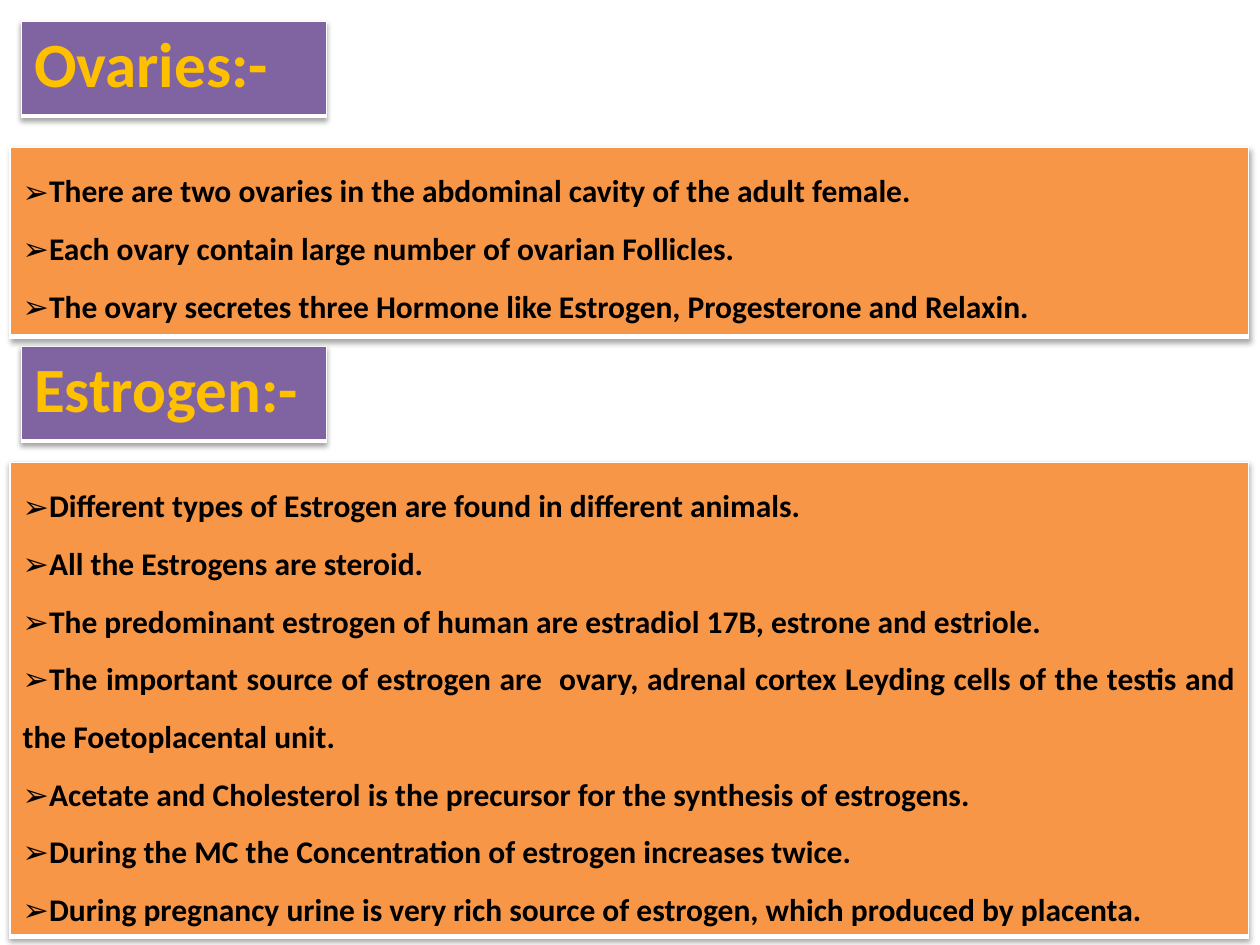
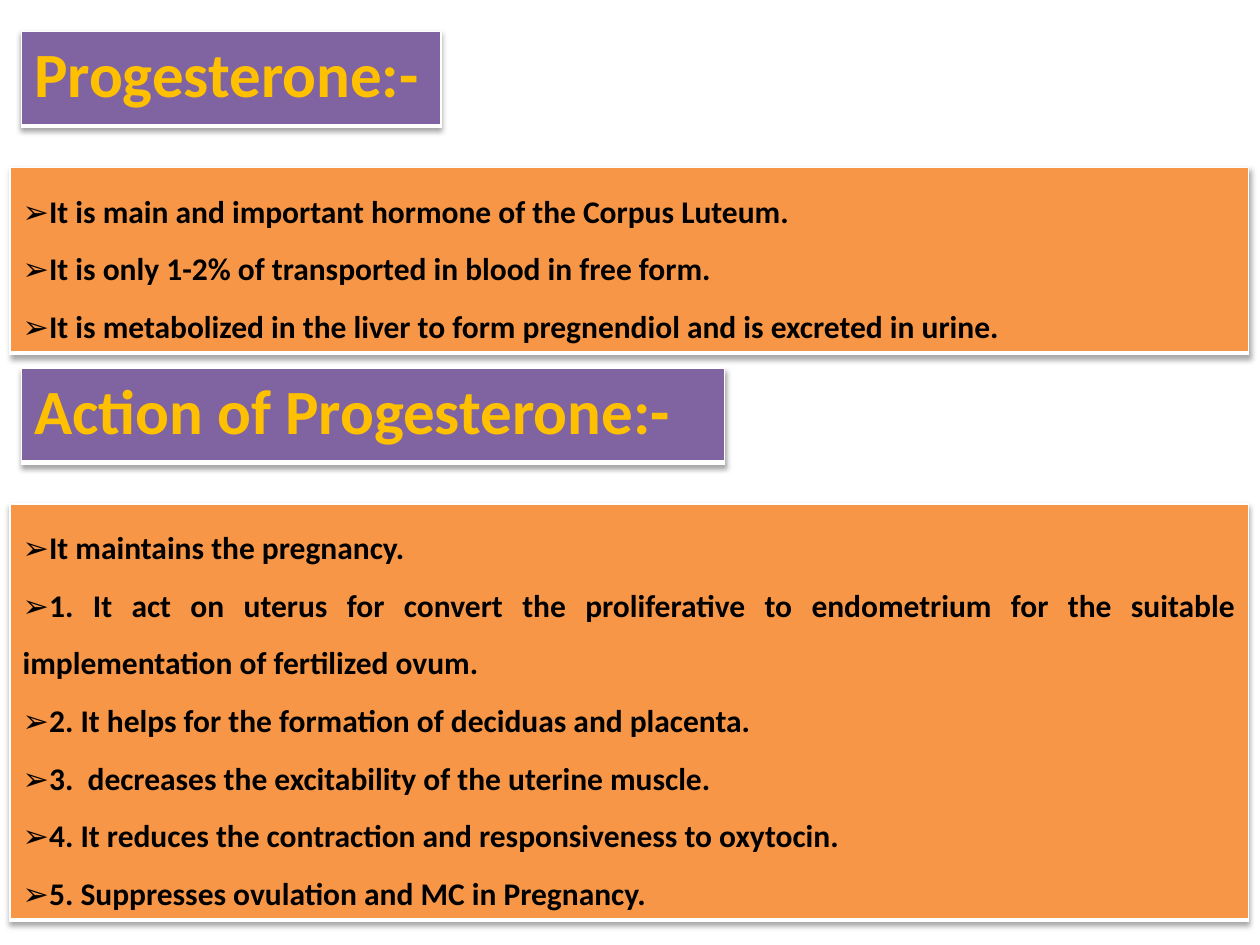
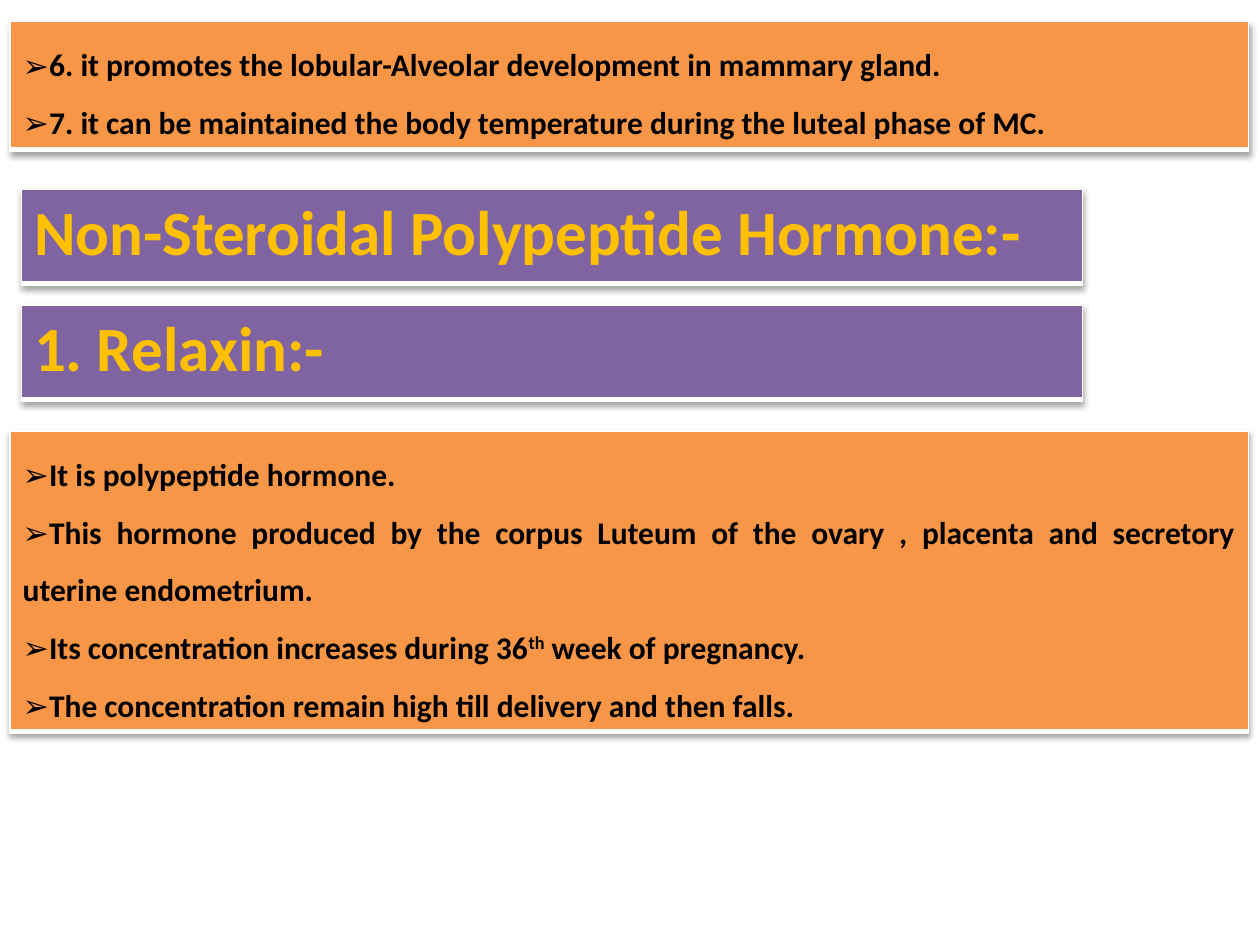
"""Builds three slides on ovarian hormones from heading and bullet panels."""
import pptx
import pptx.dml.color
import pptx.enum.text
import pptx.oxml
import pptx.oxml.ns
import pptx.util
from pptx.util import Inches

PURPLE = pptx.dml.color.RGBColor(0x80, 0x64, 0xA2)
ORANGE = pptx.dml.color.RGBColor(0xF7, 0x96, 0x46)
GOLD = pptx.dml.color.RGBColor(0xFF, 0xC0, 0x00)
BLACK = pptx.dml.color.RGBColor(0x00, 0x00, 0x00)
FONT = "Calibri"
NS = pptx.oxml.ns.nsdecls("a")
SHADOW = (f'<a:effectLst {NS}><a:outerShdw blurRad="40000" dist="23000" dir="5400000" rotWithShape="0">'
          '<a:srgbClr val="000000"><a:alpha val="35000"/></a:srgbClr></a:outerShdw></a:effectLst>')
BORDERS = {"lnL": 1, "lnR": 1, "lnT": 1, "lnB": 3}


def add_panel(s, left, top, width, height, fill):
    """Add a one-cell table with white borders and a shadow; return its cell."""
    table = s.shapes.add_table(1, 1, Inches(left), Inches(top), Inches(width), Inches(height)).table
    table.horz_banding = False
    table._tbl.tblPr.insert(0, pptx.oxml.parse_xml(SHADOW))
    cell = table.cell(0, 0)
    tcPr = cell._tc.get_or_add_tcPr()
    for tag, points in BORDERS.items():
        tcPr.append(pptx.oxml.parse_xml(
            f'<a:{tag} {NS} w="{pptx.util.Pt(points)}"><a:solidFill><a:srgbClr val="FFFFFF"/>'
            f'</a:solidFill></a:{tag}>'))
    cell.fill.solid()
    cell.fill.fore_color.rgb = fill
    return cell


def add_run(p, text, size, color):
    """Append a bold run to a paragraph and return it."""
    r = p.add_run()
    r.text = text
    r.font.name = FONT
    r.font.size = pptx.util.Pt(size)
    r.font.bold = True
    r.font.color.rgb = color
    return r


slides = [
    {
        "headings": [(0.17, 2.42, "Ovaries:-"), (2.75, 2.42, "Estrogen:-")],
        "lists": [
            (1.17, 1.5, [
                "There are two ovaries in the abdominal cavity of the adult female.",
                "Each ovary contain large number of ovarian Follicles.",
                "The ovary secretes three Hormone like Estrogen, Progesterone and Relaxin.",
            ]),
            (3.67, 3.7, [
                "Different types of Estrogen are found in different animals.",
                "All the Estrogens are steroid.",
                "The predominant estrogen of human are estradiol 17B, estrone and estriole.",
                "The important source of estrogen are  ovary, adrenal cortex Leyding cells of the testis "
                "and the Foetoplacental unit.",
                "Acetate and Cholesterol is the precursor for the synthesis of estrogens.",
                "During the MC the Concentration of estrogen increases twice.",
                "During pregnancy urine is very rich source of estrogen, which produced by placenta.",
            ]),
        ],
    },
    {
        "headings": [(0.25, 3.33, "Progesterone:-"), (2.92, 5.58, "Action of Progesterone:-")],
        "lists": [
            (1.33, 1.45, [
                "It is main and important hormone of the Corpus Luteum.",
                "It is only 1-2% of transported in blood in free form.",
                "It is metabolized in the liver to form pregnendiol and is excreted in urine.",
            ]),
            (4, 3.25, [
                "It maintains the pregnancy.",
                "1. It act on uterus for convert the proliferative to endometrium for the suitable "
                "implementation of fertilized ovum.",
                "2. It helps for the formation of deciduas and placenta.",
                "3.  decreases the excitability of the uterine muscle.",
                "4. It reduces the contraction and responsiveness to oxytocin.",
                "5. Suppresses ovulation and MC in Pregnancy.",
            ]),
        ],
    },
    {
        "headings": [(1.5, 8.42, "Non-Steroidal Polypeptide Hormone:-"), (2.42, 8.42, "1. Relaxin:-")],
        "lists": [
            (0.17, 1, [
                "6. it promotes the lobular-Alveolar development in mammary gland.",
                "7. it can be maintained the body temperature during the luteal phase of MC.",
            ]),
            (3.42, 2.3, [
                "It is polypeptide hormone.",
                "This hormone produced by the corpus Luteum of the ovary , placenta and secretory "
                "uterine endometrium.",
                "Its concentration increases during 36^th^ week of pregnancy.",
                "The concentration remain high till delivery and then falls.",
            ]),
        ],
    },
]

prs = pptx.Presentation()
prs.slide_width = Inches(10)
prs.slide_height = Inches(7.5)

for content in slides:
    s = prs.slides.add_slide(prs.slide_layouts[6])

    for top, width, heading in content["headings"]:
        cell = add_panel(s, 0.17, top, width, 0.75, PURPLE)
        add_run(cell.text_frame.paragraphs[0], heading, 36, GOLD)

    for top, height, items in content["lists"]:
        tf = add_panel(s, 0.08, top, 9.83, height, ORANGE).text_frame
        for i, item in enumerate(items):
            p = tf.add_paragraph() if i else tf.paragraphs[0]
            p.alignment = pptx.enum.text.PP_ALIGN.JUSTIFY
            p.line_spacing = 1.5
            pPr = p._p.get_or_add_pPr()
            pPr.append(pptx.oxml.parse_xml(f'<a:buFont {NS} typeface="Arial"/>'))
            pPr.append(pptx.oxml.parse_xml(f'<a:buChar {NS} char="➢"/>'))
            for j, part in enumerate(item.split("^")):
                r = add_run(p, part, 18, BLACK)
                if j % 2:
                    r.font._element.set("baseline", "30000")

prs.save("out.pptx")
